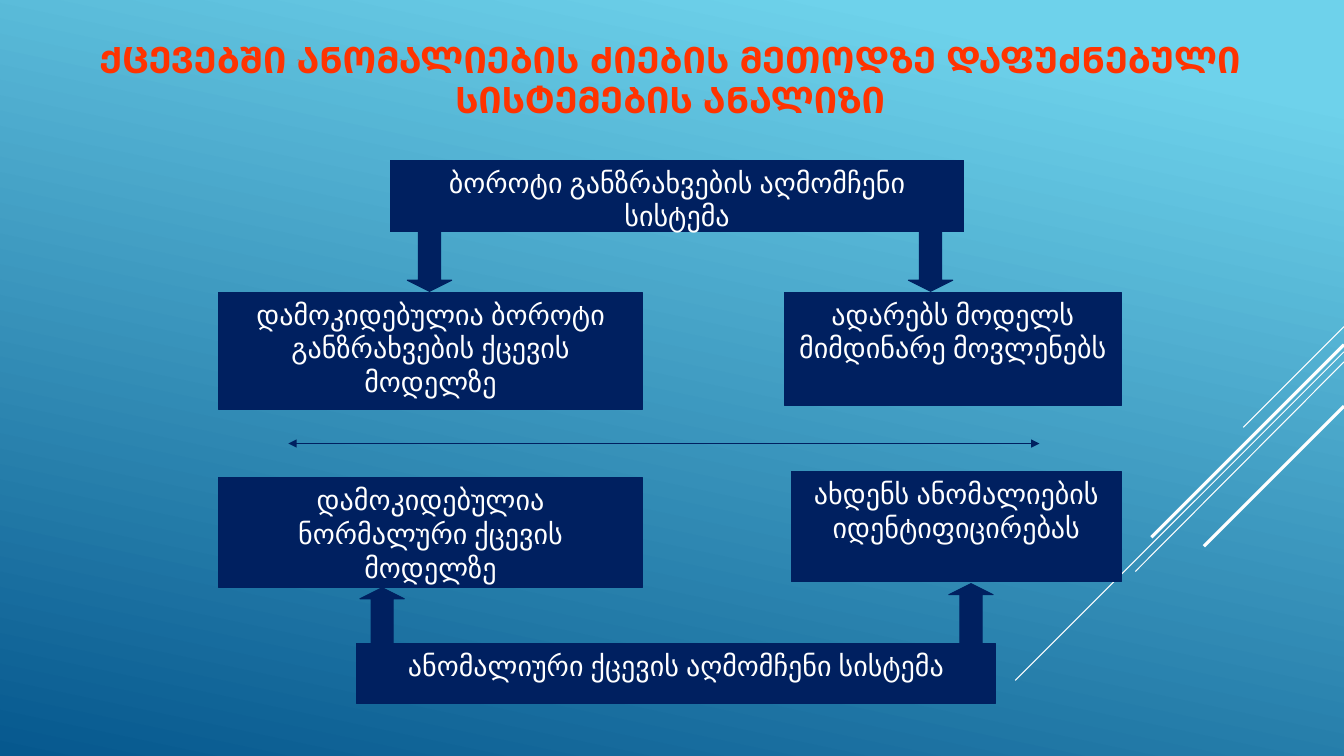
import pptx
import pptx.util
import pptx.dml.color
import pptx.enum.shapes
import pptx.enum.text
import pptx.oxml
import pptx.oxml.ns
from dataclasses import dataclass


@dataclass(frozen=True)
class Theme:
    sky: str = "6ED2EB"
    deep: str = "06588E"
    navy: str = "002060"
    white: str = "FFFFFF"
    red: str = "FF3300"
    title_size: int = 26
    body_size: int = 20
    title_font: str = "Arial"
    body_font: str = "Lato"
    thin: float = 0.75
    thick: float = 2.25


theme = Theme()
PX = 9144
RGB = pptx.dml.color.RGBColor.from_string
MSO_SHAPE = pptx.enum.shapes.MSO_SHAPE


def write(s, text, *, size, font, color, bold=False, anchor="TOP", spacing=1.0):
    tf = s.text_frame
    tf.word_wrap = True
    tf.auto_size = pptx.enum.text.MSO_AUTO_SIZE.NONE
    tf.vertical_anchor = pptx.enum.text.MSO_ANCHOR[anchor]
    p = tf.paragraphs[0]
    p.alignment = pptx.enum.text.PP_ALIGN.CENTER
    p.line_spacing = spacing
    r = p.add_run()
    r.text = text
    r.font.size = pptx.util.Pt(size)
    r.font.name = font
    r.font.bold = bold
    r.font.color.rgb = RGB(color)


def add_line(sp, x1, y1, x2, y2, color, width):
    s = sp.add_connector(pptx.enum.shapes.MSO_CONNECTOR.STRAIGHT, x1 * PX, y1 * PX, x2 * PX, y2 * PX)
    s.line.color.rgb = RGB(color)
    s.line.width = pptx.util.Pt(width)
    s._element.spPr.append(pptx.oxml.parse_xml(f"<a:effectLst {pptx.oxml.ns.nsdecls('a')}/>"))
    return s


prs = pptx.Presentation()
prs.slide_width = 1333 * PX
prs.slide_height = 750 * PX
slide = prs.slides.add_slide(prs.slide_layouts[5])
sp = slide.shapes

bg = slide.background.fill
bg.gradient()
bg.gradient_angle = 360 - 102
for stop, position, color in zip(bg.gradient_stops, (0.1, 1), (theme.sky, theme.deep)):
    stop.position = position
    stop.color.rgb = RGB(color)

for y1, x2, y2, width in [
    (324, 1233, 424, theme.thin),
    (349, 1007, 675, theme.thin),
    (359, 1126, 567, theme.thin),
    (342, 1142, 533, theme.thick),
    (403, 1194, 542, theme.thick),
]:
    add_line(sp, 1333, y1, x2, y2, theme.white, width)

title = sp.title
title.left, title.top, title.width, title.height = (v * PX for v in (12, 24, 1306, 114))
write(title, "ᲥᲪᲔᲕᲔᲑᲨᲘ ᲐᲜᲝᲛᲐᲚᲘᲔᲑᲘᲡ ᲫᲘᲔᲑᲘᲡ ᲛᲔᲗᲝᲓᲖᲔ ᲓᲐᲤᲣᲫᲜᲔᲑᲣᲚᲘ ᲡᲘᲡᲢᲔᲛᲔᲑᲘᲡ ᲐᲜᲐᲚᲘᲖᲘ",
      size=theme.title_size, font=theme.title_font, color=theme.red,
      bold=True, anchor="MIDDLE", spacing=0.9)

boxes = [
    (387, 159, 569, 71, "ბოროტი განზრახვების აღმომჩენი სისტემა"),
    (217, 290, 420, 116, "დამოკიდებულია ბოროტი განზრახვების ქცევის მოდელზე"),
    (778, 290, 334, 112, "ადარებს მოდელს მიმდინარე მოვლენებს"),
    (217, 474, 420, 109, "დამოკიდებულია ნორმალური ქცევის მოდელზე"),
    (785, 468, 327, 109, "ახდენს ანომალიების იდენტიფიცირებას"),
    (354, 638, 633, 60, "ანომალიური ქცევის აღმომჩენი სისტემა"),
]
arrows = [(404, 230, 0), (901, 230, 0), (941, 579, 180), (357, 583, 180)]
parts = [(MSO_SHAPE.RECTANGLE, *box, 0) for box in boxes]
parts += [(MSO_SHAPE.DOWN_ARROW, x, y, 44, 59, "", turn) for x, y, turn in arrows]

for kind, x, y, w, h, text, turn in parts:
    s = sp.add_shape(kind, x * PX, y * PX, w * PX, h * PX)
    s.shadow.inherit = False
    s.rotation = turn
    s.fill.solid()
    s.fill.fore_color.rgb = RGB(theme.navy)
    s.line.color.rgb = RGB(theme.navy)
    s.line.width = pptx.util.Pt(theme.thin)
    if kind == MSO_SHAPE.DOWN_ARROW:
        s.adjustments[0] = 0.5
        s.adjustments[1] = 0.25
    if text:
        write(s, text, size=theme.body_size, font=theme.body_font, color=theme.white)

divider = add_line(sp, 286, 440, 1031, 440, theme.navy, theme.thin)
for end in ("headEnd", "tailEnd"):
    divider.line._get_or_add_ln().append(
        pptx.oxml.parse_xml(f'<a:{end} {pptx.oxml.ns.nsdecls("a")} type="triangle"/>'))

prs.save("out.pptx")
